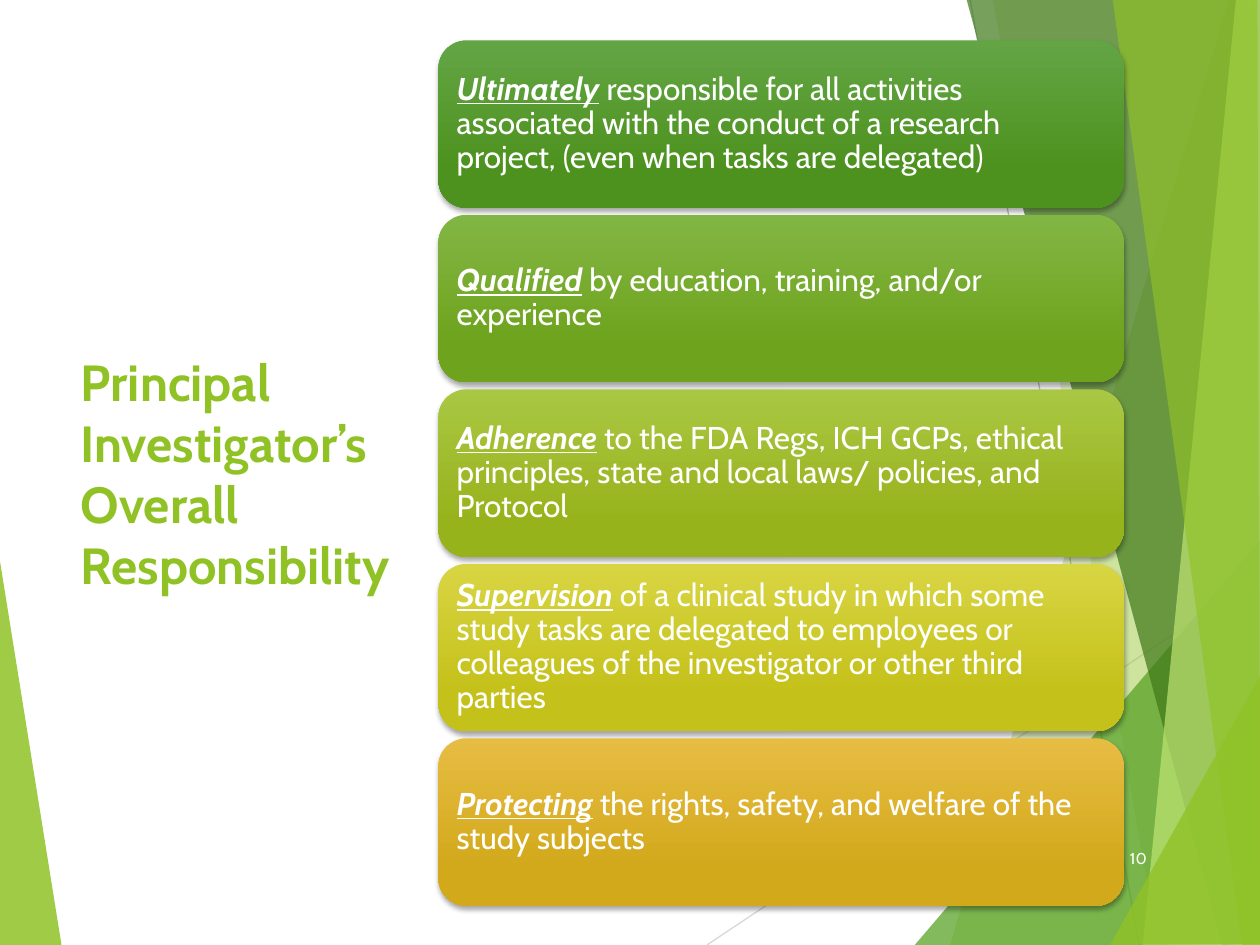
from lxml.etree import SubElement
from pptx import Presentation
from pptx.dml.color import RGBColor
from pptx.enum.shapes import MSO_CONNECTOR, MSO_SHAPE
from pptx.enum.text import MSO_ANCHOR, MSO_AUTO_SIZE, PP_ALIGN
from pptx.oxml.ns import qn
from pptx.util import Inches, Pt

THEME = {
    "font": "Cabin",
    "title": {"color": "90C226", "size": 29},
    "duty": {"color": "FFFFFF", "size": 18},
    "number": {"color": "FFFFFF", "size": 9},
    "green": "90C226",
    "mid_green": "54A021",
    "dark_green": "3F7819",
    "pale_green": "C0E474",
    "shadow": "000000",
    "thin_lines": ("D9D9D9", "BFBFBF"),
    "bars": [("63A545", "4D921E"), ("82B644", "6EA31D"), ("AAC744", "97B31C"),
             ("D8D543", "C4C11A"), ("E7BC43", "D2A91B")],
}


def style_text(run, role, **emphasis):
    values = {"name": THEME["font"], "size": Pt(THEME[role]["size"]), **emphasis}
    for name, value in values.items():
        setattr(run.font, name, value)
    run.font.color.rgb = RGBColor.from_string(THEME[role]["color"])


def set_frame(frame, margin_x, margin_y):
    values = {"word_wrap": True, "auto_size": MSO_AUTO_SIZE.NONE,
              "vertical_anchor": MSO_ANCHOR.MIDDLE,
              "margin_left": Inches(margin_x), "margin_right": Inches(margin_x),
              "margin_top": Inches(margin_y), "margin_bottom": Inches(margin_y)}
    for name, value in values.items():
        setattr(frame, name, value)


prs = Presentation()
prs.slide_width, prs.slide_height = Inches(10), Inches(7.5)
slide = prs.slides.add_slide(prs.slide_layouts[5])
shapes = slide.shapes

# Thin lines behind the facets
thin_lines = [(5.61, 7.5, 10.01, 4.57), (7.7, 0, 9.04, 7.5)]
for ends, color in zip(thin_lines, THEME["thin_lines"]):
    thin_line = shapes.add_connector(MSO_CONNECTOR.STRAIGHT, *map(Inches, ends))
    thin_line.line.color.rgb = RGBColor.from_string(color)
    thin_line.line.width = Pt(0.75)
    SubElement(thin_line._element.spPr, qn("a:effectLst"))

# Translucent facets: colour, opacity in percent, corners
facets = [
    ("green", 85, [(-0.01, 4.39), (0.49, 7.51), (-0.01, 7.5)]),
    ("green", 30, [(9.75, 0), (7.54, 7.5), (10.02, 7.51), (10.01, 0.01)]),
    ("green", 20, [(7.88, -0.01), (9.19, 7.5), (10.01, 7.5), (10.01, -0.01)]),
    ("mid_green", 72, [(7.26, 7.5), (10, 4.29), (10.01, 7.5)]),
    ("dark_green", 70, [(7.67, -0.01), (9.7, 7.5), (10.01, 7.49), (10.01, -0.01)]),
    ("pale_green", 70, [(9.81, -0.01), (9.07, 7.5), (10.01, 7.5), (10, -0.01)]),
    ("green", 65, [(8.83, -0.01), (9.86, 7.5), (10, 7.5), (9.98, -0.01)]),
    ("green", 80, [(8.81, 7.5), (10.01, 5.35), (10.01, 7.49)]),
]
for color, opacity, corners in facets:
    start, *others = [(Inches(x), Inches(y)) for x, y in corners]
    outline = shapes.build_freeform(*start)
    outline.add_line_segments(others, close=True)
    facet = outline.convert_to_shape()
    facet.shadow.inherit = False
    facet.line.fill.background()
    facet.fill.solid()
    facet.fill.fore_color.rgb = RGBColor.from_string(THEME[color])
    fill_color = facet._element.spPr.find(f"{qn('a:solidFill')}/{qn('a:srgbClr')}")
    SubElement(fill_color, qn("a:alpha"), val=str(opacity * 1000))

# Title
title = shapes.title
title.left, title.top, title.width, title.height = map(Inches, (0.54, 1.51, 2.91, 4.48))
set_frame(title.text_frame, 0.1, 0.05)
title.text_frame.text = "Principal Investigator’s \vOverall Responsibility"
heading = title.text_frame.paragraphs[0]
heading.alignment = PP_ALIGN.LEFT
for run in heading.runs:
    style_text(run, "title", bold=True)

# Responsibility bars
duties = [
    ("Ultimately", " responsible for all activities associated with the conduct "
     "of a research project, (even when tasks are delegated)"),
    ("Qualified", " by education, training, and/or experience"),
    ("Adherence", " to the FDA Regs, ICH GCPs, ethical principles, state and "
     "local laws/ policies, and Protocol"),
    ("Supervision", " of a clinical study in which some study tasks are delegated "
     "to employees or colleagues of the investigator or other third parties"),
    ("Protecting", " the rights, safety, and welfare of the study subjects"),
]
first_top, last_top = 0.32, 5.86
pitch = (last_top - first_top) / (len(duties) - 1)
for row, ((keyword, detail), colors) in enumerate(zip(duties, THEME["bars"])):
    bar = shapes.add_shape(MSO_SHAPE.ROUNDED_RECTANGLE, Inches(3.48),
                           Inches(first_top + row * pitch), Inches(5.44), Inches(1.33))
    bar.line.fill.background()
    bar.fill.gradient()
    bar.fill.gradient_angle = 270
    for stop, position, color in zip(bar.fill.gradient_stops, (0, 0.78), colors):
        stop.position = position
        stop.color.rgb = RGBColor.from_string(color)

    # Soft shadow straight below
    bar.shadow.inherit = False
    effects = bar._element.spPr.find(qn("a:effectLst"))
    shadow = SubElement(effects, qn("a:outerShdw"), blurRad=str(Pt(3)), dist=str(Pt(2)),
                        dir="5400000", rotWithShape="0")
    shadow_color = SubElement(shadow, qn("a:srgbClr"), val=THEME["shadow"])
    SubElement(shadow_color, qn("a:alpha"), val="35000")

    set_frame(bar.text_frame, 0.08, 0.08)
    duty = bar.text_frame.paragraphs[0]
    duty.alignment = PP_ALIGN.LEFT
    duty.line_spacing = 0.9
    for words, stressed in ((keyword, True), (detail, False)):
        run = duty.add_run()
        run.text = words
        style_text(run, "duty", bold=stressed, italic=stressed, underline=stressed)

# Slide number
number = shapes.add_textbox(*map(Inches, (8.64, 6.61, 0.56, 0.4)))
set_frame(number.text_frame, 0.1, 0.05)
number.text_frame.text = "10"
number_line = number.text_frame.paragraphs[0]
number_line.alignment = PP_ALIGN.RIGHT
style_text(number_line.runs[0], "number")

prs.save("out.pptx")
